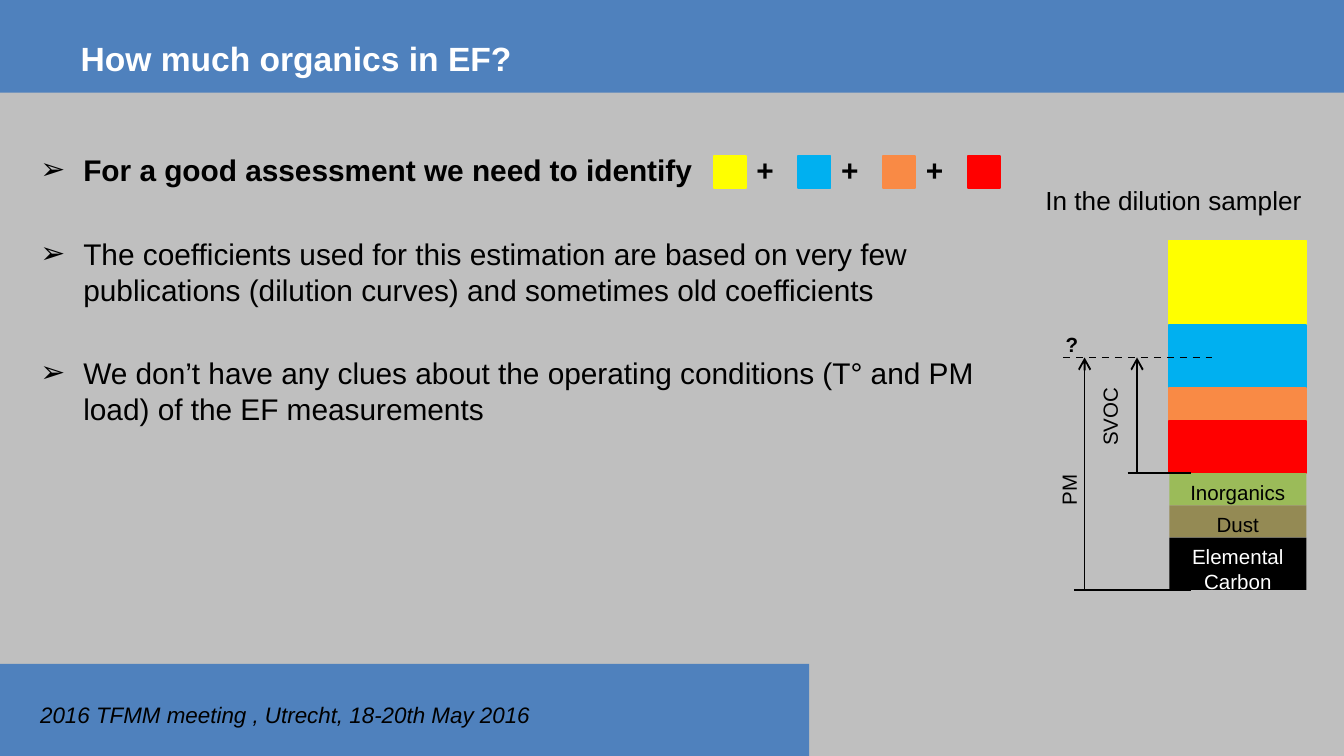
from lxml.etree import SubElement
from pptx import Presentation
from pptx.dml.color import RGBColor
from pptx.enum.dml import MSO_LINE
from pptx.enum.shapes import MSO_CONNECTOR, MSO_SHAPE
from pptx.enum.text import MSO_ANCHOR, MSO_AUTO_SIZE, PP_ALIGN
from pptx.oxml.ns import qn
from pptx.util import Inches, Pt

BLUE = "4F81BD"
BLACK = "000000"
WHITE = "FFFFFF"
ORGANICS = {"yellow": "FFFF00", "blue": "00B0F0", "orange": "F98A45", "red": "FF0000"}
LAYERS = [
    (0.63, ORGANICS["yellow"], None, None),
    (0.47, ORGANICS["blue"], None, None),
    (0.24, ORGANICS["orange"], None, None),
    (0.39, ORGANICS["red"], None, None),
    (0.24, "9BBB59", "Inorganics", BLACK),
    (0.24, "948A54", "Dust", BLACK),
    (0.39, BLACK, "Elemental Carbon", WHITE),
]
BULLETS = [
    ("For a good assessment we need to identify", True),
    ("The coefficients used for this estimation are based on very few publications "
     "(dilution curves) and sometimes old coefficients", False),
    ("We don’t have any clues about the operating conditions (T° and PM load) "
     "of the EF measurements", False),
]


def color(value):
    return RGBColor.from_string(value)


def place(shape, left, top, width, height):
    shape.left, shape.top = Inches(left), Inches(top)
    shape.width, shape.height = Inches(width), Inches(height)


def add_span(para, text, size, fill=BLACK, bold=False, italic=False):
    span = para.add_run()
    span.text = text
    span.font.name = "Arial"
    span.font.size = Pt(size)
    span.font.bold = bold
    span.font.italic = italic
    span.font.color.rgb = color(fill)


def add_block(page, left, top, width, height, fill, outlined=False):
    block = page.shapes.add_shape(
        MSO_SHAPE.RECTANGLE, Inches(left), Inches(top), Inches(width), Inches(height))
    block.shadow.inherit = False
    block.fill.solid()
    block.fill.fore_color.rgb = color(fill)
    if outlined:
        block.line.color.rgb = color(fill)
        block.line.width = Pt(1)
    else:
        block.line.fill.background()
    return block


def add_label(page, left, top, width, height, text, size, rotation=0, **style):
    box = page.shapes.add_textbox(
        Inches(left), Inches(top), Inches(width), Inches(height))
    box.rotation = rotation
    box.text_frame.word_wrap = False
    box.text_frame.auto_size = MSO_AUTO_SIZE.SHAPE_TO_FIT_TEXT
    add_span(box.text_frame.paragraphs[0], text, size, **style)


def add_line(page, start, end, dashed=False, arrow=False):
    line = page.shapes.add_connector(
        MSO_CONNECTOR.STRAIGHT, *(Inches(value) for value in start + end))
    line.line.color.rgb = color(BLACK)
    line.line.width = Pt(1)
    if dashed:
        line.line.dash_style = MSO_LINE.DASH
    if arrow:
        SubElement(line.line._get_or_add_ln(), qn("a:tailEnd"), type="arrow")
    SubElement(line._element.spPr, qn("a:effectLst"))


def fill_title(title):
    place(title, 0.52, 0.13, 9.02, 0.49)
    frame = title.text_frame
    frame.auto_size = MSO_AUTO_SIZE.NONE
    frame.vertical_anchor = MSO_ANCHOR.BOTTOM
    frame.margin_left = frame.margin_right = Inches(0.08)
    frame.margin_top = frame.margin_bottom = Inches(0.04)
    para = frame.paragraphs[0]
    para.alignment = PP_ALIGN.LEFT
    add_span(para, "How much organics in EF?", 18, WHITE, bold=True)


def fill_body(body):
    place(body, 0.2, 0.77, 7.4, 3.19)
    frame = body.text_frame
    frame.auto_size = MSO_AUTO_SIZE.NONE
    frame.vertical_anchor = MSO_ANCHOR.TOP
    frame.margin_top = Inches(0.36)
    for index, (text, bold) in enumerate(BULLETS):
        para = frame.add_paragraph() if index else frame.paragraphs[0]
        para.space_before = Pt(25.6 if index else 0)
        properties = para._p.get_or_add_pPr()
        properties.set("marL", str(Inches(0.32)))
        properties.set("indent", str(-Inches(0.32)))
        SubElement(properties, qn("a:buChar"), char="➢")
        add_span(para, text, 16, bold=bold)


def add_swatches(page):
    for index, fill in enumerate(ORGANICS.values()):
        left = 5.31 + 0.63 * index
        add_block(page, left, 1.16, 0.24, 0.24, fill, outlined=True)
        if index < len(ORGANICS) - 1:
            add_label(page, left + 0.22, 1.08, 0.33, 0.34, "+", 16, bold=True)


def add_stack(page):
    top = 1.79
    for height, fill, text, text_color in LAYERS:
        block = add_block(page, 8.7, top, 1.02, height, fill, outlined=text is None)
        if text:
            block.text_frame.word_wrap = True
            block.text_frame.vertical_anchor = MSO_ANCHOR.TOP
            para = block.text_frame.paragraphs[0]
            para.alignment = PP_ALIGN.CENTER
            add_span(para, text, 11, text_color)
        top += height


def add_ranges(page):
    level, organics_base, stack_base = 2.66, 3.52, 4.39
    add_line(page, (8.46, organics_base), (8.46, level), arrow=True)
    add_line(page, (8.07, stack_base), (8.07, level), arrow=True)
    add_line(page, (7.91, level), (9.02, level), dashed=True)
    add_line(page, (8.39, organics_base), (8.86, organics_base))
    add_line(page, (7.99, stack_base), (8.86, stack_base))
    add_label(page, 7.94, 2.95, 0.64, 0.29, "SVOC", 11, rotation=270)
    add_label(page, 7.74, 3.5, 0.43, 0.29, "PM", 11, rotation=270)
    add_label(page, 7.83, 2.42, 0.3, 0.29, "?", 11, bold=True)


def main():
    deck = Presentation()
    deck.slide_width = Inches(10)
    deck.slide_height = deck.slide_width * 9 // 16
    page = deck.slides.add_slide(deck.slide_layouts[1])
    page.background.fill.solid()
    page.background.fill.fore_color.rgb = color("BFBFBF")
    title, body = page.placeholders
    header = add_block(page, 0, 0, 10, 0.69, BLUE)
    title._element.addprevious(header._element)
    fill_title(title)
    fill_body(body)
    footer = add_block(page, 0, 4.94, 6.02, 0.68, BLUE)
    footer.height = deck.slide_height - footer.top
    add_label(page, 0.2, 5.17, 3.88, 0.3,
              "2016 TFMM meeting , Utrecht, 18-20th May 2016", 12, italic=True)
    add_stack(page)
    add_ranges(page)
    add_label(page, 7.68, 1.32, 2.12, 0.34, "In the dilution sampler", 14)
    add_swatches(page)
    deck.save("out.pptx")


if __name__ == "__main__":
    main()
